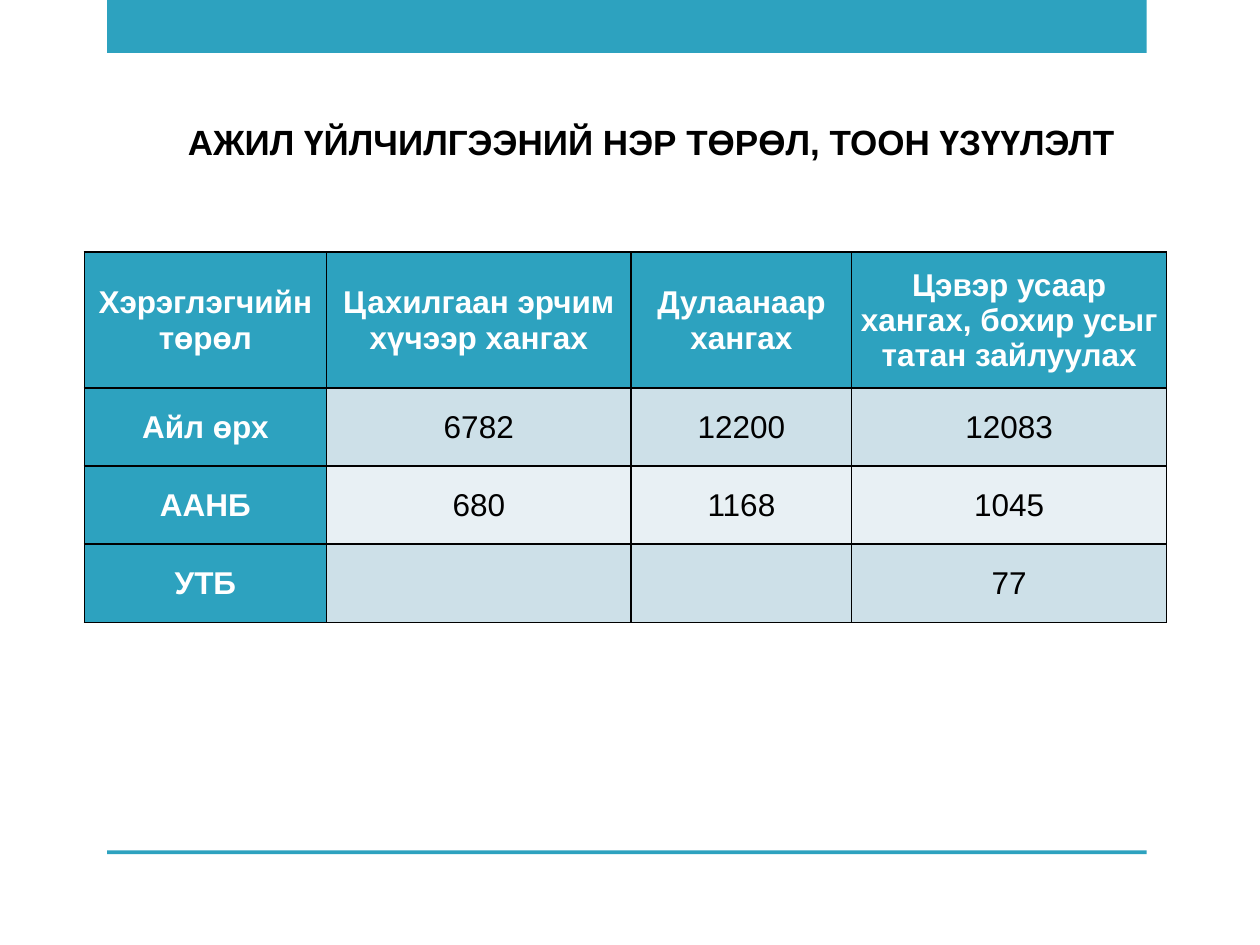
from lxml.etree import SubElement
from pptx import Presentation
from pptx.dml.color import RGBColor
from pptx.enum.shapes import MSO_SHAPE as Shape
from pptx.enum.text import MSO_ANCHOR as Anchor, PP_ALIGN as Align
from pptx.oxml.ns import qn
from pptx.util import Inches, Pt

TEAL, BLACK, WHITE = "2DA2BF", "000000", "FFFFFF"
BANDS = ("CDE0E8", "E8F0F4")
TITLE = "АЖИЛ ҮЙЛЧИЛГЭЭНИЙ НЭР ТӨРӨЛ, ТООН ҮЗҮҮЛЭЛТ"
SERVICES = [
    ["Хэрэглэгчийн\nтөрөл", "Цахилгаан эрчим хүчээр хангах", "Дулаанаар хангах",
     "Цэвэр усаар хангах, бохир усыг татан зайлуулах"],
    ["Айл өрх", "6782", "12200", "12083"],
    ["ААНБ", "680", "1168", "1045"],
    ["УТБ", "", "", "77"],
]


def color(value):
    return RGBColor.from_string(value)


def assign(target, values):
    for name, value in values.items():
        setattr(target, name, value)


class SlideBuilder:
    """Draws styled elements on one slide, on a grid of 100 columns by 75 rows."""

    def __init__(self, deck):
        assign(deck, {"slide_width": Inches(10), "slide_height": Inches(7.5)})
        self.column, self.row = deck.slide_width / 100, deck.slide_height / 75
        self.page = deck.slides.add_slide(deck.slide_layouts[5])

    def place(self, left, top, width, height):
        return {"left": round(left * self.column), "top": round(top * self.row),
                "width": round(width * self.column), "height": round(height * self.row)}

    def set_text(self, frame, text, size, ink, bold, align):
        frame.text = text
        for para in frame.paragraphs:
            para.alignment = align
            for span in para.runs:
                assign(span.font, {"name": "Arial", "size": Pt(size), "bold": bold})
                span.font.color.rgb = color(ink)

    def bar(self, *area):
        box = self.page.shapes.add_shape(Shape.RECTANGLE, **self.place(*area))
        box.shadow.inherit = False
        box.fill.solid()
        box.fill.fore_color.rgb = color(TEAL)
        box.line.fill.background()

    def title(self, text, *area):
        box = self.page.shapes.title
        assign(box, self.place(*area))
        assign(box.text_frame, {"margin_left": Inches(0.25), "word_wrap": True,
                                "vertical_anchor": Anchor.MIDDLE})
        self.set_text(box.text_frame, text, 20, BLACK, True, Align.LEFT)

    def cell(self, cell, text, fill, heading):
        assign(cell, {"vertical_anchor": Anchor.MIDDLE, "margin_left": Inches(0.01),
                      "margin_right": Inches(0.01), "margin_top": Inches(0.01),
                      "margin_bottom": 0})
        self.set_text(cell.text_frame, text, 18, WHITE if heading else BLACK,
                      heading, Align.CENTER)
        properties = cell._tc.get_or_add_tcPr()
        for edge in ("a:lnL", "a:lnR", "a:lnT", "a:lnB"):
            line = SubElement(properties, qn(edge), w=str(Pt(1)))
            ink = SubElement(line, qn("a:solidFill"))
            SubElement(ink, qn("a:srgbClr"), val=BLACK)
        cell.fill.solid()
        cell.fill.fore_color.rgb = color(fill)

    def table(self, records, left, top, widths, heights):
        area = self.place(left, top, sum(widths), sum(heights))
        table = self.page.shapes.add_table(len(heights), len(widths), **area).table
        for column, width in zip(table.columns, widths):
            column.width = round(width * self.column)
        for row, height in zip(table.rows, heights):
            row.height = round(height * self.row)
        for r, record in enumerate(records):
            for c, text in enumerate(record):
                heading = r == 0 or c == 0
                fill = TEAL if heading else BANDS[(r - 1) % 2]
                self.cell(table.cell(r, c), text, fill, heading)


def main():
    deck = Presentation()
    builder = SlideBuilder(deck)
    builder.bar(8.5, 0, 82.5, 4.2)
    builder.bar(8.5, 67.5, 82.5, 0.3)
    builder.title(TITLE, 12.4, 9, 79.3, 4.4)
    builder.table(SERVICES, 6.7, 20, [19.2, 24.2, 17.5, 25], [10.8] + [6.2] * 3)
    deck.save("out.pptx")


if __name__ == "__main__":
    main()
